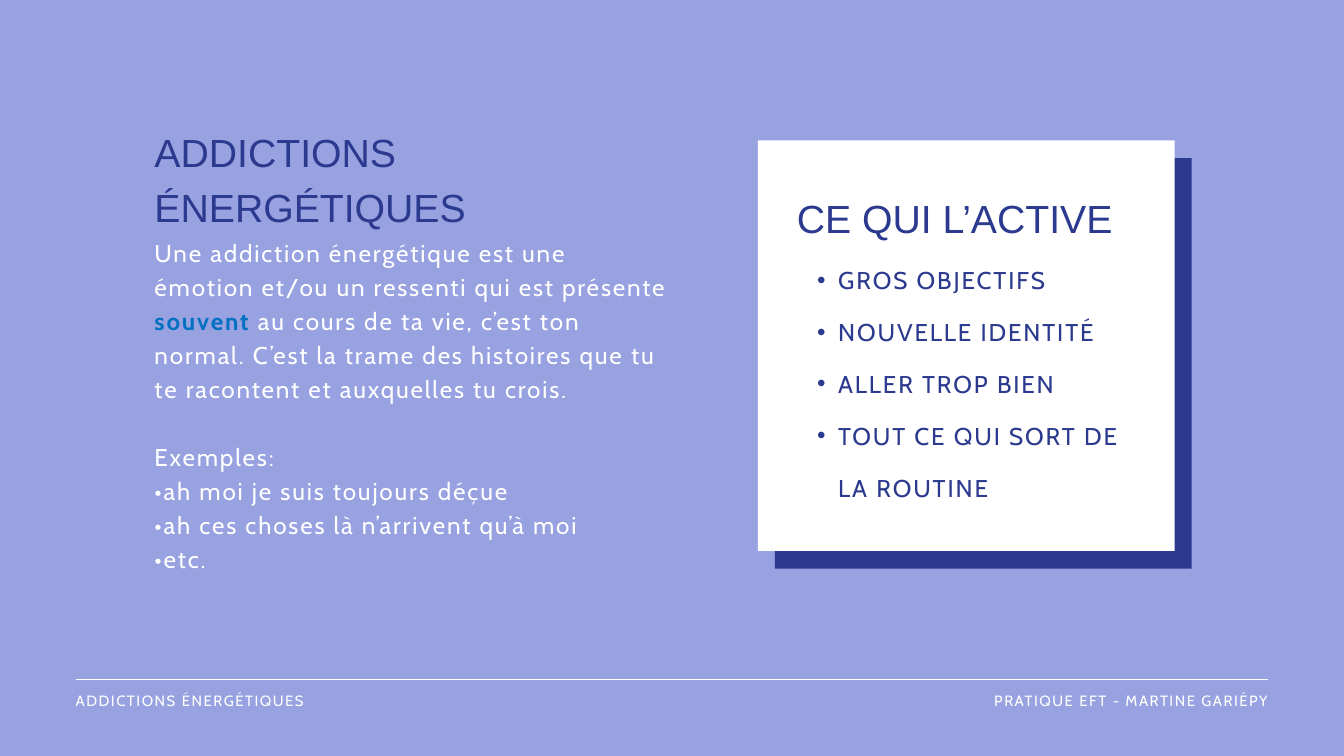
from dataclasses import dataclass

from lxml.etree import SubElement
from pptx import Presentation
from pptx.dml.color import RGBColor
from pptx.enum.shapes import MSO_CONNECTOR, MSO_SHAPE
from pptx.enum.text import MSO_AUTO_SIZE, PP_ALIGN
from pptx.oxml.ns import qn
from pptx.util import Cm, Pt


@dataclass(frozen=True)
class Type:
    face: str
    size: float
    line: float
    track: float = 0


@dataclass(frozen=True)
class Theme:
    back: RGBColor = RGBColor(0x98, 0xA2, 0xE1)
    navy: RGBColor = RGBColor(0x2B, 0x39, 0x8E)
    white: RGBColor = RGBColor(0xFF, 0xFF, 0xFF)
    blue: RGBColor = RGBColor(0x00, 0x70, 0xC0)
    title: Type = Type("Arial", 42, 58.8)
    body: Type = Type("Cabin", 26, 36.44, 1.95)
    list: Type = Type("Cabin", 26, 55.6, 2)
    foot: Type = Type("Cabin", 16, 22.4, 1.63)


class Deck:
    """Draws styled elements on the current slide."""

    def __init__(self, theme, width, height):
        self.theme = theme
        self.show = Presentation()
        self.show.slide_width, self.show.slide_height = Cm(width), Cm(height)
        self.slide = self.show.slides.add_slide(self.show.slide_layouts[6])
        fill = self.slide.background.fill
        fill.solid()
        fill.fore_color.rgb = theme.back

    def rule(self, left, right, top):
        line = self.slide.shapes.add_connector(
            MSO_CONNECTOR.STRAIGHT, Cm(left), Cm(top), Cm(right), Cm(top))
        line.line.color.rgb = self.theme.white
        line.line.width = Pt(0.75)
        SubElement(line._element.spPr, qn("a:effectLst"))

    def panel(self, left, top, width, height, color):
        box = self.slide.shapes.add_shape(
            MSO_SHAPE.RECTANGLE, Cm(left), Cm(top), Cm(width), Cm(height))
        box.shadow.inherit = False
        box.fill.solid()
        box.fill.fore_color.rgb = color
        box.line.fill.background()

    def frame(self, left, top, width, height):
        frame = self.slide.shapes.add_textbox(
            Cm(left), Cm(top), Cm(width), Cm(height)).text_frame
        frame.word_wrap = True
        frame.auto_size = MSO_AUTO_SIZE.SHAPE_TO_FIT_TEXT
        frame.margin_left = frame.margin_right = 0
        frame.margin_top = frame.margin_bottom = 0
        return frame

    def text(self, frame, words, style, color, align=PP_ALIGN.LEFT):
        first = frame.paragraphs[0]
        para = frame.add_paragraph() if first.runs else first
        para.add_run().text = words
        para.alignment = align
        para.line_spacing = Pt(style.line)
        font = para.font
        font.name, font.size = style.face, Pt(style.size)
        font.color.rgb = color
        props = para._p.get_or_add_pPr().find(qn("a:defRPr"))
        props.set("spc", str(round(style.track * 100)))
        return para

    def bullet(self, frame, words, style, color, left, hang):
        para = self.text(frame, words, style, color)
        props = para._p.get_or_add_pPr()
        props.set("marL", str(Cm(left)))
        props.set("indent", str(-Cm(hang)))
        face = SubElement(props, qn("a:buFont"), typeface="Arial")
        mark = SubElement(props, qn("a:buChar"), char="•")
        base = props.find(qn("a:defRPr"))
        base.addprevious(face)
        base.addprevious(mark)


def main():
    theme = Theme()
    deck = Deck(theme, 50.8, 28.58)
    edge, end, left, inner = 2.86, 47.94, 5.84, 30.12
    wide, slim = 19.56, 13.21

    deck.rule(edge, end, 25.7)
    deck.panel(29.29, 5.98, 15.75, 15.52, theme.navy)
    deck.panel(28.65, 5.31, 15.75, 15.52, theme.white)

    deck.text(deck.frame(left, 4.57, wide, 4.04),
              "ADDICTIONS ÉNERGÉTIQUES", theme.title, theme.navy)
    deck.text(deck.frame(inner, 7.06, slim, 1.98),
              "CE QUI L’ACTIVE", theme.title, theme.navy)
    deck.text(deck.frame(end - 12.73, 26.03, 12.73, 0.74),
              "PRATIQUE EFT - MARTINE GARIÉPY", theme.foot, theme.white,
              PP_ALIGN.RIGHT)
    deck.text(deck.frame(edge, 26.03, 25.81, 0.74),
              "ADDICTIONS ÉNERGÉTIQUES", theme.foot, theme.white)

    body = deck.frame(left, 8.82, wide, 13.94)
    para = deck.text(
        body, "Une addiction énergétique est une émotion et/ou un ressenti "
        "qui est présente ", theme.body, theme.white)
    key = para.add_run()
    key.text = "souvent"
    key.font.bold = True
    key.font.color.rgb = theme.blue
    para.add_run().text = (
        " au cours de ta vie, c’est ton normal. C’est la trame des histoires "
        "que tu te racontent et auxquelles tu crois.")
    lead = deck.text(body, "Exemples:", theme.body, theme.white)
    lead.space_before = Pt(theme.body.line)
    for words in ("•ah moi je suis toujours déçue",
                  "•ah ces choses là n’arrivent qu’à moi", "•etc."):
        deck.text(body, words, theme.body, theme.white)

    causes = deck.frame(inner, 9.17, slim, 9.6)
    for words in ("GROS OBJECTIFS", "NOUVELLE IDENTITÉ", "ALLER TROP BIEN",
                  "TOUT CE QUI SORT DE LA ROUTINE"):
        deck.bullet(causes, words, theme.list, theme.navy, 1.56, 0.79)

    deck.show.save("out.pptx")


if __name__ == "__main__":
    main()
